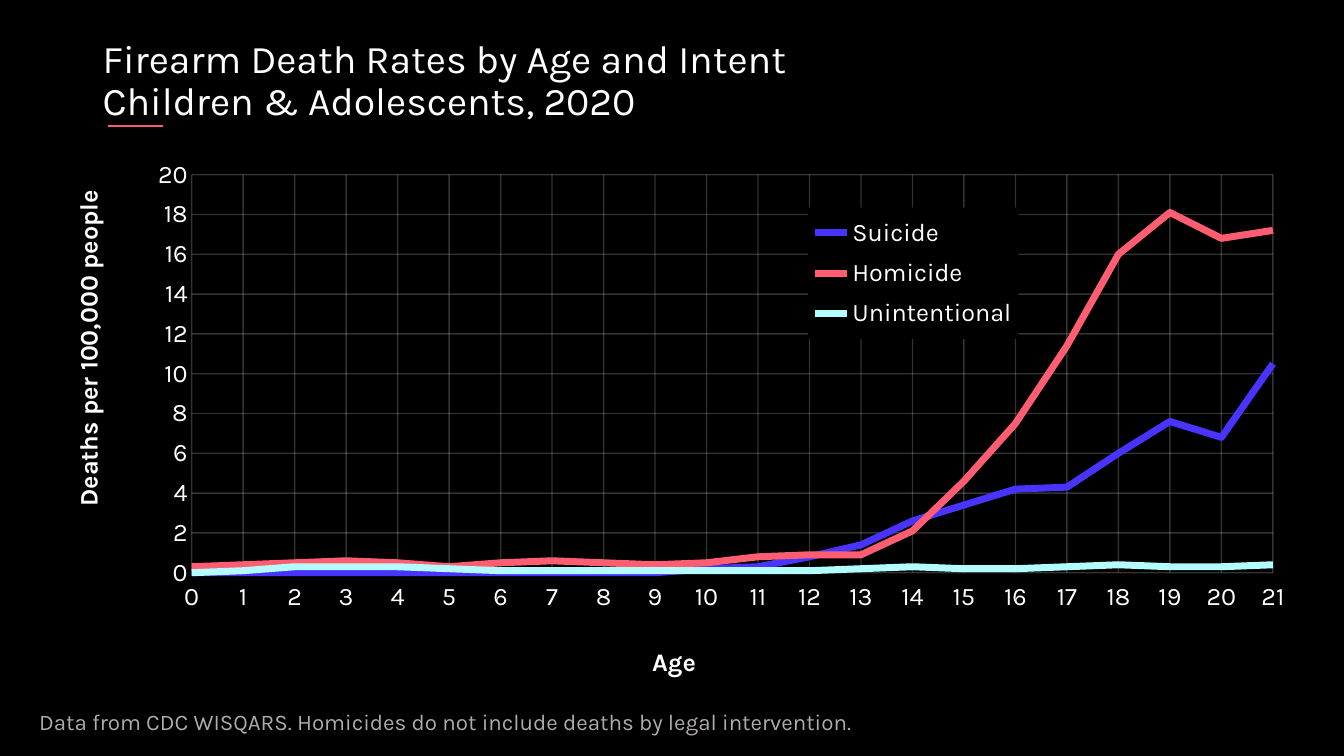
from dataclasses import dataclass

from pptx import Presentation
from pptx.chart.data import CategoryChartData
from pptx.dml.color import RGBColor
from pptx.enum.chart import (XL_CHART_TYPE, XL_LEGEND_POSITION, XL_MARKER_STYLE,
                             XL_TICK_LABEL_POSITION, XL_TICK_MARK)
from pptx.enum.shapes import MSO_CONNECTOR
from pptx.enum.text import MSO_ANCHOR
from pptx.oxml import parse_xml
from pptx.oxml.ns import nsdecls, qn
from pptx.util import Pt


@dataclass(frozen=True)
class Theme:
    font: str = "Karla"
    background: str = "000000"
    text: str = "FFFFFF"
    note: str = "AFABAB"
    accent: str = "F85B75"
    title_size: int = 28
    chart_size: int = 18
    note_size: int = 16


AGES = [str(age) for age in range(22)]
RATES = {
    "Suicide": ("4933FE", [0, 0, 0, 0, 0, 0, 0, 0, 0, 0, 0.2, 0.3, 0.8, 1.4, 2.6,
                           3.4, 4.2, 4.3, 6, 7.6, 6.8, 10.5]),
    "Homicide": ("FF5D71", [0.3, 0.4, 0.5, 0.6, 0.5, 0.3, 0.5, 0.6, 0.5, 0.4, 0.5,
                            0.8, 0.9, 0.9, 2.1, 4.6, 7.5, 11.4, 16, 18.1, 16.8, 17.2]),
    "Unintentional": ("B3FCFF", [0, 0.1, 0.3, 0.3, 0.3, 0.2, 0.1, 0.1, 0.1, 0.1, 0.1,
                                 0.1, 0.1, 0.2, 0.3, 0.2, 0.2, 0.3, 0.4, 0.3, 0.3, 0.4]),
}


def set_layout(element, index, x, y, w=None, h=None, inner=False):
    """Place a chart part by fractions of the chart area; index is its slot in the schema order."""
    for old in element.findall(qn("c:layout")):
        element.remove(old)
    target = '<c:layoutTarget val="inner"/>' if inner else ""
    modes = '<c:xMode val="edge"/><c:yMode val="edge"/>'
    sizes = "".join(f'<c:{tag} val="{value}"/>'
                    for tag, value in zip("xywh", (x, y, w, h)) if value is not None)
    element.insert(index, parse_xml(
        f'<c:layout {nsdecls("c")}><c:manualLayout>{target}{modes}{sizes}'
        '</c:manualLayout></c:layout>'))


def cross_on_categories(value_axis):
    """Start the lines on the value axis itself, not half a category beside it."""
    element = value_axis._element
    for old in element.findall(qn("c:crossBetween")):
        element.remove(old)
    element.xpath("c:crosses | c:crossesAt")[0].addnext(
        parse_xml(f'<c:crossBetween {nsdecls("c")} val="midCat"/>'))


class SlideBuilder:
    def __init__(self, prs, theme):
        self.theme = theme
        self.slide = prs.slides.add_slide(prs.slide_layouts[6])
        fill = self.slide.background.fill
        fill.solid()
        fill.fore_color.rgb = RGBColor.from_string(theme.background)

    def style(self, font, size, color, bold=False):
        font.name = self.theme.font
        font.size = Pt(size)
        font.bold = bold
        font.color.rgb = RGBColor.from_string(color)

    def text(self, text, box, size, color, anchor=MSO_ANCHOR.TOP):
        tf = self.slide.shapes.add_textbox(*map(Pt, box)).text_frame
        tf.word_wrap = True
        tf.vertical_anchor = anchor
        tf.text = text
        p = tf.paragraphs[0]
        p.line_spacing = 0.9
        for r in p.runs:
            self.style(r.font, size, color)

    def rule(self, x1, x2, y):
        line = self.slide.shapes.add_connector(
            MSO_CONNECTOR.STRAIGHT, Pt(x1), Pt(y), Pt(x2), Pt(y))
        line.line.width = Pt(1.25)
        line.line.color.rgb = RGBColor.from_string(self.theme.accent)
        line._element.spPr.append(parse_xml(f'<a:effectLst {nsdecls("a")}/>'))

    def axis(self, axis, title, x, y, rotation):
        theme = self.theme
        axis.major_tick_mark = axis.minor_tick_mark = XL_TICK_MARK.NONE
        axis.format.line.fill.background()
        axis.tick_labels.number_format = "General"
        axis.tick_labels.number_format_is_linked = False
        self.style(axis.tick_labels.font, theme.chart_size, theme.text)

        axis.has_major_gridlines = True
        grid = axis.major_gridlines.format.line
        grid.width = Pt(1)
        grid.color.rgb = RGBColor.from_string(theme.text)
        color = axis._element.xpath("c:majorGridlines//a:srgbClr")[0]
        color.append(parse_xml(f'<a:alpha {nsdecls("a")} val="20000"/>'))

        axis.has_title = True
        p = axis.axis_title.text_frame.paragraphs[0]
        p.text = title
        self.style(p.runs[0].font, theme.chart_size, theme.text, bold=True)
        element = axis.axis_title._element
        body = element.xpath(".//a:bodyPr")[0]
        body.set("rot", str(rotation * 60000))
        body.set("vert", "horz")
        set_layout(element, 1, x, y)

    def legend(self, chart):
        chart.has_legend = True
        legend = chart.legend
        legend.position = XL_LEGEND_POSITION.TOP
        legend.include_in_layout = True
        self.style(legend.font, self.theme.chart_size, self.theme.text)
        element = legend._element
        set_layout(element, 1, 0.61, 0.09, 0.17, 0.24)
        element.find(qn("c:txPr")).addprevious(parse_xml(
            f'<c:spPr {nsdecls("c", "a")}><a:solidFill>'
            f'<a:srgbClr val="{self.theme.background}"/></a:solidFill></c:spPr>'))

    def line_chart(self, box, categories, rates):
        data = CategoryChartData()
        data.categories = categories
        for name, (_, values) in rates.items():
            data.add_series(name, values)
        chart = self.slide.shapes.add_chart(
            XL_CHART_TYPE.LINE, *map(Pt, box), data).chart
        chart.has_title = False
        self.style(chart.font, self.theme.chart_size, self.theme.text)
        plot = chart.plots[0]
        plot.vary_by_categories = False
        for series, (color, _) in zip(plot.series, rates.values()):
            series.smooth = False
            series.marker.style = XL_MARKER_STYLE.NONE
            series.format.line.width = Pt(5)
            series.format.line.color.rgb = RGBColor.from_string(color)

        self.axis(chart.category_axis, "Age", 0.48, 0.88, 0)
        chart.category_axis.tick_label_position = XL_TICK_LABEL_POSITION.LOW
        value_axis = chart.value_axis
        self.axis(value_axis, "Deaths per 100,000 people", 0.01, 0.05, -90)
        value_axis.minimum_scale, value_axis.maximum_scale = 0, 20
        value_axis.major_unit = 2
        cross_on_categories(value_axis)
        self.legend(chart)
        width, height = box[2:]
        set_layout(chart._chartSpace.chart.plotArea, 0, 98 / width, 11.8 / height,
                   772.4 / width, 284.4 / height, inner=True)


def main():
    prs = Presentation()
    prs.slide_width, prs.slide_height = Pt(960), Pt(540)
    theme = Theme()
    builder = SlideBuilder(prs, theme)
    builder.rule(77, 116.6, 90)
    builder.text("Data from CDC WISQARS. Homicides do not include deaths by legal intervention.",
                 (20.9, 504.7, 704, 30.2), theme.note_size, theme.note)
    builder.line_chart((38.9, 113, 882.7, 391.7), AGES, RATES)
    builder.text("Firearm Death Rates by Age and Intent\vChildren & Adolescents, 2020",
                 (66.2, 26.6, 828, 63.4), theme.title_size, theme.text, MSO_ANCHOR.MIDDLE)
    prs.save("out.pptx")


if __name__ == "__main__":
    main()
